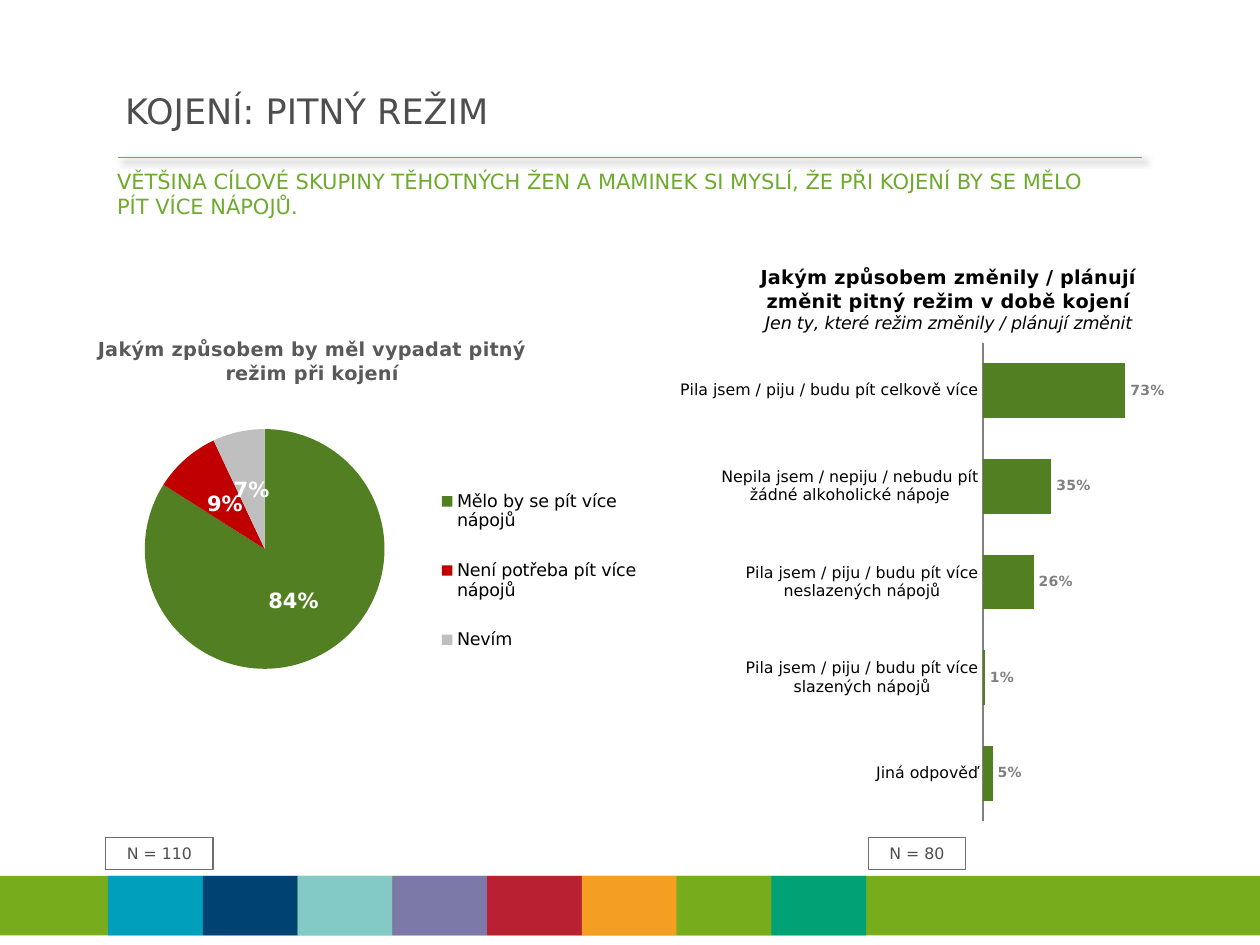
from lxml import etree
from pptx import Presentation
from pptx.chart.data import CategoryChartData
from pptx.dml.color import RGBColor
from pptx.enum import chart as ce, shapes, text
from pptx.oxml import parse_xml
from pptx.oxml.ns import nsdecls, qn
from pptx.util import Pt

FONT = "DejaVu Sans"


def style(font, size, color, bold=False, italic=False):
    font.name, font.size, font.bold, font.italic = FONT, Pt(size), bold, italic
    font.color.rgb = RGBColor.from_string(color)


def place(element, before, **box):
    old = element.find(qn("c:layout"))
    if old is not None:
        element.remove(old)
    modes = "".join(f'<c:{k}Mode val="edge"/>' for k in "xy")
    target = '<c:layoutTarget val="inner"/>' if before == "plot" else ""
    sizes = "".join(f'<c:{k} val="{v}"/>' for k, v in box.items())
    layout = parse_xml(f'<c:layout {nsdecls("c")}><c:manualLayout>{target}{modes}{sizes}'
                       '</c:manualLayout></c:layout>')
    if before == "plot":
        element.insert(0, layout)
    else:
        element.find(qn(before)).addnext(layout)


prs = Presentation()
prs.slide_width, prs.slide_height = Pt(720), Pt(540)
s = prs.slides.add_slide(prs.slide_layouts[6])

rule = s.shapes.add_connector(shapes.MSO_CONNECTOR.STRAIGHT, Pt(67.5), Pt(90), Pt(652.5), Pt(90))
rule.line.color.rgb = RGBColor.from_string("77AD1C")
rule.line.width = Pt(0.75)
effects = etree.SubElement(rule._element.spPr, qn("a:effectLst"))
effects.append(parse_xml(
    f'<a:outerShdw {nsdecls("a")} blurRad="50800" dist="38100" dir="2700000">'
    '<a:srgbClr val="000000"><a:alpha val="40000"/></a:srgbClr></a:outerShdw>'))

band_colors = ["009FBB", "004272", "83C9C6", "7C78A8", "B92032", "F49F22", "77AD1C", "00A275"]
bands = [(0, 720, "77AD1C")] + [(61.8 + 54.15 * i, 54.15, c) for i, c in enumerate(band_colors)]
for left, width, color in bands:
    sp = s.shapes.add_shape(shapes.MSO_SHAPE.RECTANGLE, Pt(left), Pt(500.5), Pt(width), Pt(34))
    sp.shadow.inherit = False
    sp.fill.solid()
    sp.fill.fore_color.rgb = RGBColor.from_string(color)
    sp.line.fill.background()

headings = [
    (64.4, 44.6, 638.6, 36.7, 20, "4E4E4E", text.MSO_ANCHOR.MIDDLE, ["KOJENÍ: PITNÝ REŽIM"]),
    (59.8, 92.9, 624.2, 51.8, 12, "6EAA2E", text.MSO_ANCHOR.TOP,
     ["VĚTŠINA CÍLOVÉ SKUPINY TĚHOTNÝCH ŽEN A MAMINEK SI MYSLÍ, ŽE PŘI KOJENÍ BY SE MĚLO",
      "PÍT VÍCE NÁPOJŮ."]),
]
for left, top, width, height, size, color, anchor, lines in headings:
    tf = s.shapes.add_textbox(Pt(left), Pt(top), Pt(width), Pt(height)).text_frame
    tf.word_wrap = True
    tf.vertical_anchor = anchor
    p = tf.paragraphs[0]
    for i, line in enumerate(lines):
        if i:
            p.add_line_break()
        r = p.add_run()
        r.text = line
        style(r.font, size, color)

for left, width, label in [(60.3, 61.5, "N = 110"), (496.2, 55.5, "N = 80")]:
    sp = s.shapes.add_shape(shapes.MSO_SHAPE.RECTANGLE, Pt(left), Pt(478.6), Pt(width), Pt(18.2))
    sp.shadow.inherit = False
    sp.fill.background()
    sp.line.color.rgb = RGBColor.from_string("6E6E6E")
    sp.line.width = Pt(0.75)
    tf = sp.text_frame
    tf.word_wrap = False
    tf.vertical_anchor = text.MSO_ANCHOR.MIDDLE
    p = tf.paragraphs[0]
    p.alignment = text.PP_ALIGN.CENTER
    r = p.add_run()
    r.text = label
    style(r.font, 9, "4E4E4E")

charts = [
    dict(kind=ce.XL_CHART_TYPE.PIE, at=(36.7, 185, 345.6, 254.2),
         answers=[("Mělo by se pít více nápojů", 0.84), ("Není potřeba pít více nápojů", 0.09),
                  ("Nevím", 0.07)],
         title=[("Jakým způsobem by měl vypadat pitný režim při kojení", 11, "595959", True, False)],
         title_at=dict(x=0.05, y=0.02), plot=dict(x=0.133, y=0.237, w=0.397, h=0.539),
         label=(12, "FFFFFF", True), position=ce.XL_LABEL_POSITION.CENTER),
    dict(kind=ce.XL_CHART_TYPE.BAR_CLUSTERED, at=(387.4, 145.4, 329, 330.5),
         answers=[("Pila jsem / piju / budu pít celkově více", 0.73),
                  ("Nepila jsem / nepiju / nebudu pít žádné alkoholické nápoje", 0.35),
                  ("Pila jsem / piju / budu pít více neslazených nápojů", 0.26),
                  ("Pila jsem / piju / budu pít více slazených nápojů", 0.01),
                  ("Jiná odpověď", 0.05)],
         title=[("Jakým způsobem změnily / plánují změnit pitný režim v době kojení",
                 11, "000000", True, False),
                ("Jen ty, které režim změnily / plánují změnit", 10, "000000", False, True)],
         title_at=dict(x=0.137, y=0.01), plot=dict(x=0.53, y=0.153, w=0.339, h=0.827),
         label=(8, "808080", True), position=ce.XL_LABEL_POSITION.OUTSIDE_END),
]
drawn = []
for c in charts:
    data = CategoryChartData(number_format="0%")
    data.categories = [name for name, share in c["answers"]]
    data.add_series("Series 1", [share for name, share in c["answers"]])
    chart = s.shapes.add_chart(c["kind"], *map(Pt, c["at"]), data).chart
    style(chart.font, 9, "000000")
    chart.has_legend = False
    tf = chart.chart_title.text_frame
    for i, (line, *look) in enumerate(c["title"]):
        p = tf.add_paragraph() if i else tf.paragraphs[0]
        r = p.add_run()
        r.text = line
        style(r.font, *look)
    chart.chart_title.include_in_layout = False
    place(chart.chart_title._element, "c:tx", **c["title_at"])
    place(chart._chartSpace.chart.plotArea, "plot", **c["plot"])
    plot = chart.plots[0]
    plot.has_data_labels = True
    labels = plot.data_labels
    labels.show_value = True
    labels.show_percentage = False
    labels.number_format, labels.number_format_is_linked = "0%", False
    labels.position = c["position"]
    style(labels.font, *c["label"])
    drawn.append(chart)
pie, bars = drawn

pie.plots[0].vary_by_categories = True
for i, color in enumerate(["527F22", "C00000", "BFBFBF"]):
    fill = pie.plots[0].series[0].points[i].format.fill
    fill.solid()
    fill.fore_color.rgb = RGBColor.from_string(color)
pie.has_legend = True
pie.legend.position = ce.XL_LEGEND_POSITION.LEFT
pie.legend.include_in_layout = False
style(pie.legend.font, 10, "000000")
place(pie.legend._element, "c:legendPos", x=0.6, y=0.31, w=0.37, h=0.49)

plot = bars.plots[0]
plot.vary_by_categories = False
plot.gap_width = 75
fill = plot.series[0].format.fill
fill.solid()
fill.fore_color.rgb = RGBColor.from_string("527F22")
axis = bars.category_axis
axis.reverse_order = True
axis.major_tick_mark = ce.XL_TICK_MARK.NONE
axis.format.line.color.rgb = RGBColor.from_string("808080")
style(axis.tick_labels.font, 9, "000000")
axis = bars.value_axis
axis.minimum_scale, axis.maximum_scale = 0, 1
axis.has_major_gridlines = False
axis.visible = False

prs.save("out.pptx")
